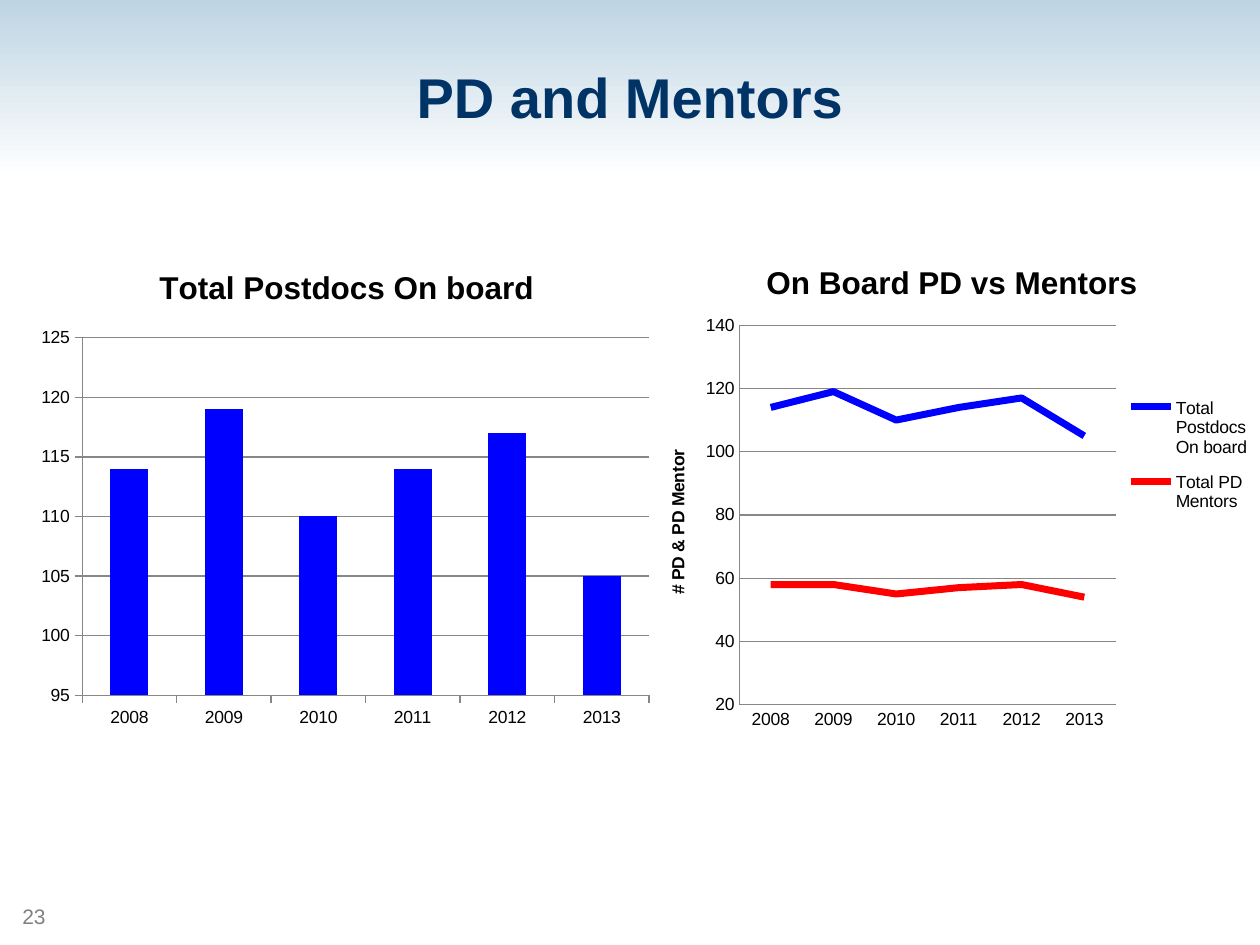
from lxml.etree import SubElement
from pptx import Presentation
from pptx.chart.data import CategoryChartData
from pptx.dml.color import RGBColor
from pptx.enum.chart import XL_CHART_TYPE, XL_LEGEND_POSITION, XL_TICK_MARK
from pptx.enum.shapes import MSO_SHAPE
from pptx.enum.text import MSO_ANCHOR, PP_ALIGN
from pptx.oxml.ns import qn
from pptx.util import Cm, Pt


def rgb(value):
    return RGBColor.from_string(value)


def set_font(font, size, color, bold=False):
    font.name = "Arial"
    font.size = Pt(size)
    font.bold = bold
    font.color.rgb = rgb(color)


prs = Presentation()
prs.slide_width, prs.slide_height = Cm(25.4), Cm(19.05)
s = prs.slides.add_slide(prs.slide_layouts[5])

# Gradient band, placed behind the title
band = s.shapes.add_shape(MSO_SHAPE.RECTANGLE, 0, 0, prs.slide_width, Cm(3.58))
band.shadow.inherit = False
band.line.fill.background()
band.fill.gradient()
band.fill.gradient_angle = 270
for stop, (position, color) in zip(band.fill.gradient_stops, [(0, "BED4E3"), (1, "FFFFFF")]):
    stop.position = position
    stop.color.rgb = rgb(color)
s.shapes.title.element.addprevious(band.element)

title = s.shapes.title
title.left, title.top, title.width, title.height = Cm(0.85), Cm(0.43), Cm(23.7), Cm(3.18)
tf = title.text_frame
tf.text = "PD and Mentors"
tf.vertical_anchor = MSO_ANCHOR.MIDDLE
p = tf.paragraphs[0]
p.alignment = PP_ALIGN.CENTER
p.line_spacing = 0.9
set_font(p.font, 32, "003366", True)

number = s.shapes.add_textbox(Cm(0.2), Cm(18.08), Cm(1.75), Cm(0.76))
tf = number.text_frame
tf.word_wrap = True
tf.text = "23"
set_font(tf.paragraphs[0].font, 12, "808080")

years = ["2008", "2009", "2010", "2011", "2012", "2013"]
postdocs = ("Total Postdocs On board", [114, 119, 110, 114, 117, 105], "0000FF")
mentors = ("Total PD Mentors", [58, 58, 55, 57, 58, 54], "FF0000")

# Type, title, series, frame in cm, inner plot area, value scale, tick marks
charts = [
    (XL_CHART_TYPE.COLUMN_CLUSTERED, "Total Postdocs On board", [postdocs],
     (0.64, 4.93, 12.7, 9.88), (0.08, 0.19, 0.9, 0.73),
     (95, 125, 5), XL_TICK_MARK.OUTSIDE),
    (XL_CHART_TYPE.LINE, "On Board PD vs Mentors", [postdocs, mentors],
     (12.98, 4.83, 12.42, 10.34), (0.155, 0.167, 0.611, 0.74),
     (20, 140, 20), XL_TICK_MARK.NONE),
]
for kind, heading, series_list, frame, plot_area, scale, ticks in charts:
    data = CategoryChartData()
    data.categories = years
    for name, values, color in series_list:
        data.add_series(name, values)
    chart = s.shapes.add_chart(kind, *map(Cm, frame), data).chart
    set_font(chart.font, 10, "000000")

    chart.has_title = True
    chart.chart_title.text_frame.text = heading
    set_font(chart.chart_title.text_frame.paragraphs[0].font, 18, "000000", True)
    chart.chart_title.include_in_layout = False

    val_axis, cat_axis = chart.value_axis, chart.category_axis
    val_axis.minimum_scale, val_axis.maximum_scale, val_axis.major_unit = scale
    val_axis.has_major_gridlines = True
    val_axis.major_gridlines.format.line.color.rgb = rgb("878787")
    for axis in (val_axis, cat_axis):
        axis.major_tick_mark = ticks
        axis.minor_tick_mark = XL_TICK_MARK.NONE
        axis.format.line.color.rgb = rgb("878787")

    plot = chart.plots[0]
    plot.vary_by_categories = False
    chart.has_legend = kind == XL_CHART_TYPE.LINE
    # Element, position of its layout, target settings, box as chart fractions
    area = chart.element.find(".//" + qn("c:plotArea"))
    layouts = [(area, 0, [("layoutTarget", "inner")], plot_area)]
    if kind == XL_CHART_TYPE.LINE:
        chart.legend.position = XL_LEGEND_POSITION.RIGHT
        chart.legend.include_in_layout = False
        legend = chart.element.find(".//" + qn("c:legend"))
        layouts.append((legend, 1, [], (0.78, 0.28, 0.21, 0.28)))
        val_axis.axis_title.text_frame.text = "# PD & PD Mentor"
        set_font(val_axis.axis_title.text_frame.paragraphs[0].font, 10, "000000", True)
    else:
        plot.gap_width = 150

    for ser, (name, values, color) in zip(plot.series, series_list):
        if kind == XL_CHART_TYPE.LINE:
            ser.smooth = False
            ser.format.line.color.rgb = rgb(color)
            ser.format.line.width = Pt(4)
        else:
            ser.format.fill.solid()
            ser.format.fill.fore_color.rgb = rgb(color)

    for element, index, target, box in layouts:
        for old in element.findall(qn("c:layout")):
            element.remove(old)
        layout = SubElement(element, qn("c:layout"))
        element.insert(index, layout)
        manual = SubElement(layout, qn("c:manualLayout"))
        modes = [("xMode", "edge"), ("yMode", "edge")]
        for tag, value in target + modes + list(zip("xywh", box)):
            SubElement(manual, qn("c:" + tag)).set("val", str(value))

prs.save("out.pptx")
